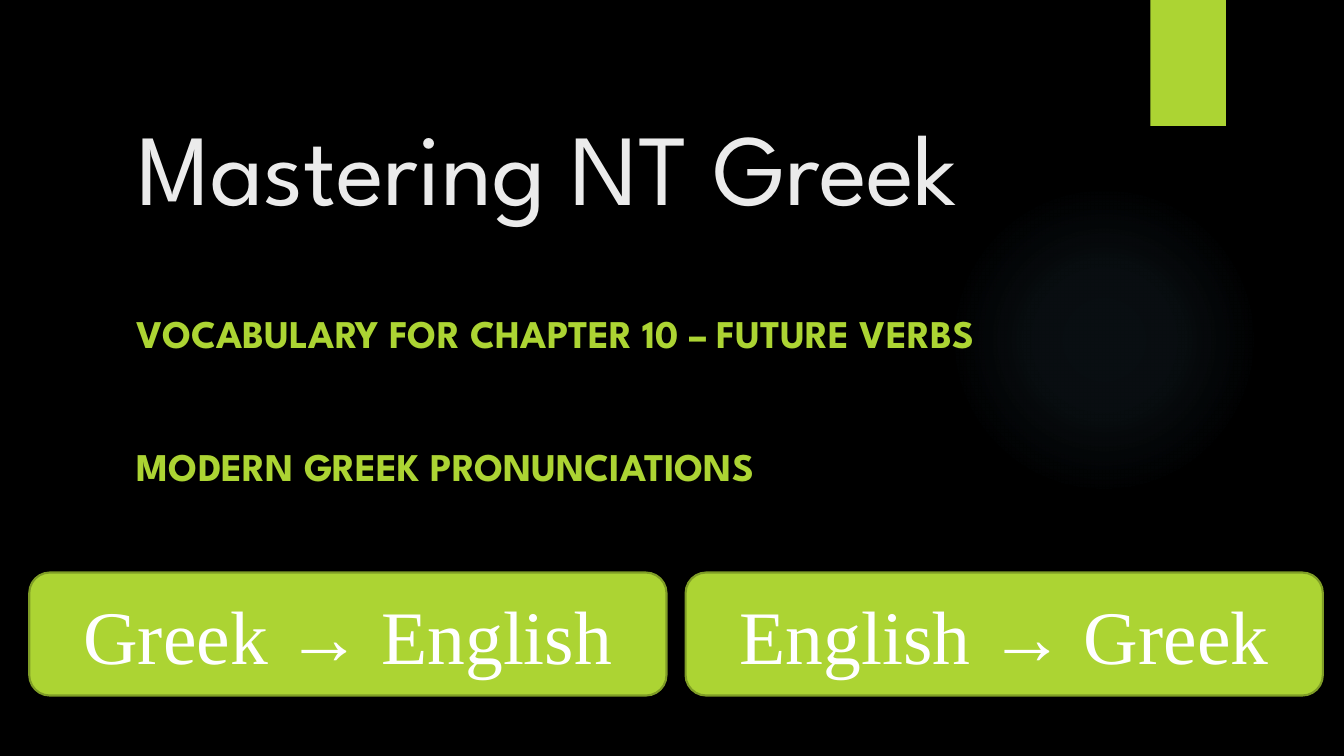
from lxml import etree
from pptx import Presentation
from pptx.dml.color import RGBColor
from pptx.enum.shapes import MSO_SHAPE
from pptx.enum.text import MSO_ANCHOR, MSO_AUTO_SIZE, PP_ALIGN
from pptx.oxml import parse_xml
from pptx.oxml.ns import nsdecls
from pptx.util import Inches, Pt

OVAL, RECT, ROUNDED = MSO_SHAPE.OVAL, MSO_SHAPE.RECTANGLE, MSO_SHAPE.ROUNDED_RECTANGLE
LEFT, CENTER = PP_ALIGN.LEFT, PP_ALIGN.CENTER
TOP, MIDDLE, BOTTOM = MSO_ANCHOR.TOP, MSO_ANCHOR.MIDDLE, MSO_ANCHOR.BOTTOM

# Content
TITLE = "Mastering NT Greek"
SUBTITLE = ["VOCABULARY FOR CHAPTER 10 – FUTURE VERBS", "MODERN GREEK PRONUNCIATIONS"]
BUTTONS = ["Greek → English", "English → Greek"]

# Style
HEAD_FONT, BUTTON_FONT = "League Spartan", "Times New Roman"
BLACK, WHITE, PALE = "000000", "FFFFFF", "EBEBEB"
LIME, OLIVE, GLOW = "ACD433", "7F9D26", "7AC4F0"
GLOW_STOPS = [(0, 7), (36, 6), (69, 0)]  # position and opacity, percent

# Layout in inches
TEXT_LEFT = 1.26
BUTTON_LEFT, BUTTON_TOP, BUTTON_W, BUTTON_H, BUTTON_GAP = 0.29, 5.68, 6.32, 1.22, 0.19


def rgb(hex_color):
    return RGBColor.from_string(hex_color)


def add_block(s, kind, box, fill):
    sp = s.shapes.add_shape(kind, *map(Inches, box))
    sp.shadow.inherit = False
    sp.fill.solid()
    sp.fill.fore_color.rgb = rgb(fill)
    sp.line.fill.background()
    return sp


def set_text(tf, lines, font, size, color, align, anchor, bold=False, gap=0):
    tf.word_wrap = True
    tf.auto_size = MSO_AUTO_SIZE.NONE
    tf.vertical_anchor = anchor
    tf.text = "\n".join(lines)
    for i, p in enumerate(tf.paragraphs):
        p.alignment = align
        p.space_before = Pt(gap if i else 0)
        for r in p.runs:
            r.font.name, r.font.size, r.font.bold = font, Pt(size), bold
            r.font.color.rgb = rgb(color)


def set_glow(sp):
    stops = "".join(
        f'<a:gs pos="{pos * 1000}"><a:srgbClr val="{GLOW}">'
        f'<a:alpha val="{alpha * 1000}"/></a:srgbClr></a:gs>'
        for pos, alpha in GLOW_STOPS)
    grad = parse_xml(
        f'<a:gradFill {nsdecls("a")} rotWithShape="1"><a:gsLst>{stops}</a:gsLst>'
        '<a:path path="circle"><a:fillToRect l="50000" t="50000" r="50000" b="50000"/>'
        '</a:path></a:gradFill>')
    props = sp.element.spPr
    solid = next(e for e in props if etree.QName(e).localname == "solidFill")
    props.replace(solid, grad)


prs = Presentation()
prs.slide_width, prs.slide_height = Inches(13.33), Inches(7.5)
s = prs.slides.add_slide(prs.slide_layouts[5])
s.background.fill.solid()
s.background.fill.fore_color.rgb = rgb(BLACK)

# Decoration
set_glow(add_block(s, OVAL, (9.41, 1.83, 3.08, 3.08), GLOW))
add_block(s, RECT, (11.41, 0, 0.75, 1.25), LIME)

# Title and subtitle
title = s.shapes.title
title.left, title.top, title.width, title.height = map(Inches, (TEXT_LEFT, 0.7, 10.04, 1.59))
set_text(title.text_frame, [TITLE], HEAD_FONT, 72, PALE, LEFT, BOTTOM)
subtitle = s.shapes.add_textbox(*map(Inches, (TEXT_LEFT, 3.02, 10.43, 2.55)))
set_text(subtitle.text_frame, SUBTITLE, HEAD_FONT, 28, LIME, LEFT, TOP, bold=True, gap=61)

# Direction buttons
for i, label in enumerate(BUTTONS):
    x = BUTTON_LEFT + i * (BUTTON_W + BUTTON_GAP)
    button = add_block(s, ROUNDED, (x, BUTTON_TOP, BUTTON_W, BUTTON_H), LIME)
    button.line.color.rgb = rgb(OLIVE)
    button.line.width = Pt(1.5)
    set_text(button.text_frame, [label], BUTTON_FONT, 54, WHITE, CENTER, MIDDLE)

prs.save("out.pptx")
